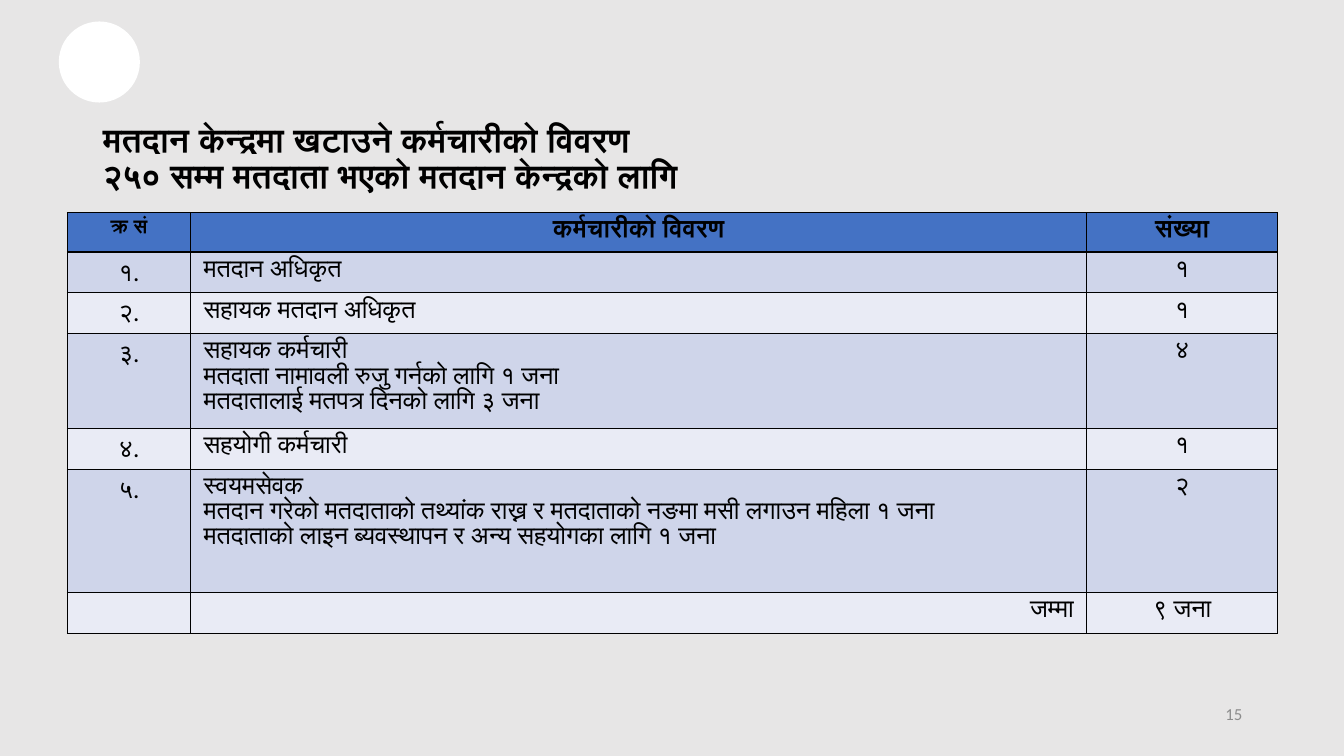
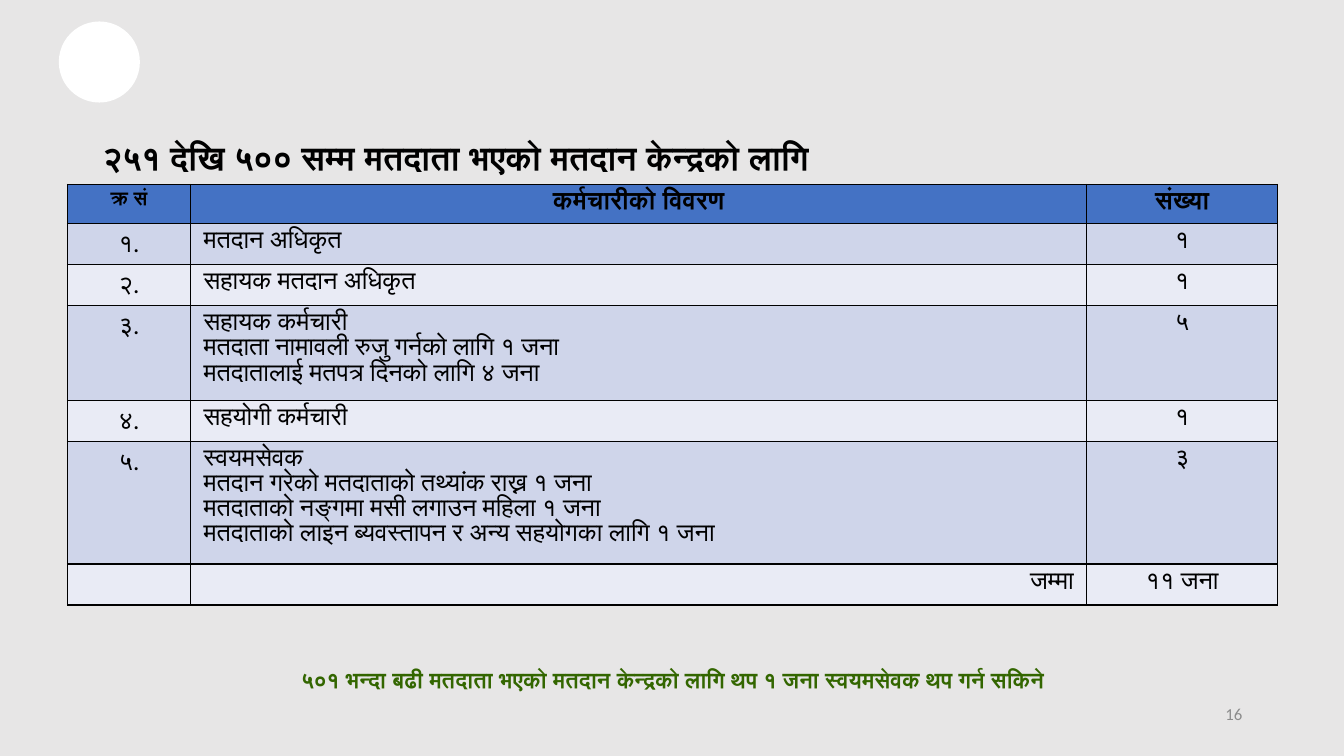
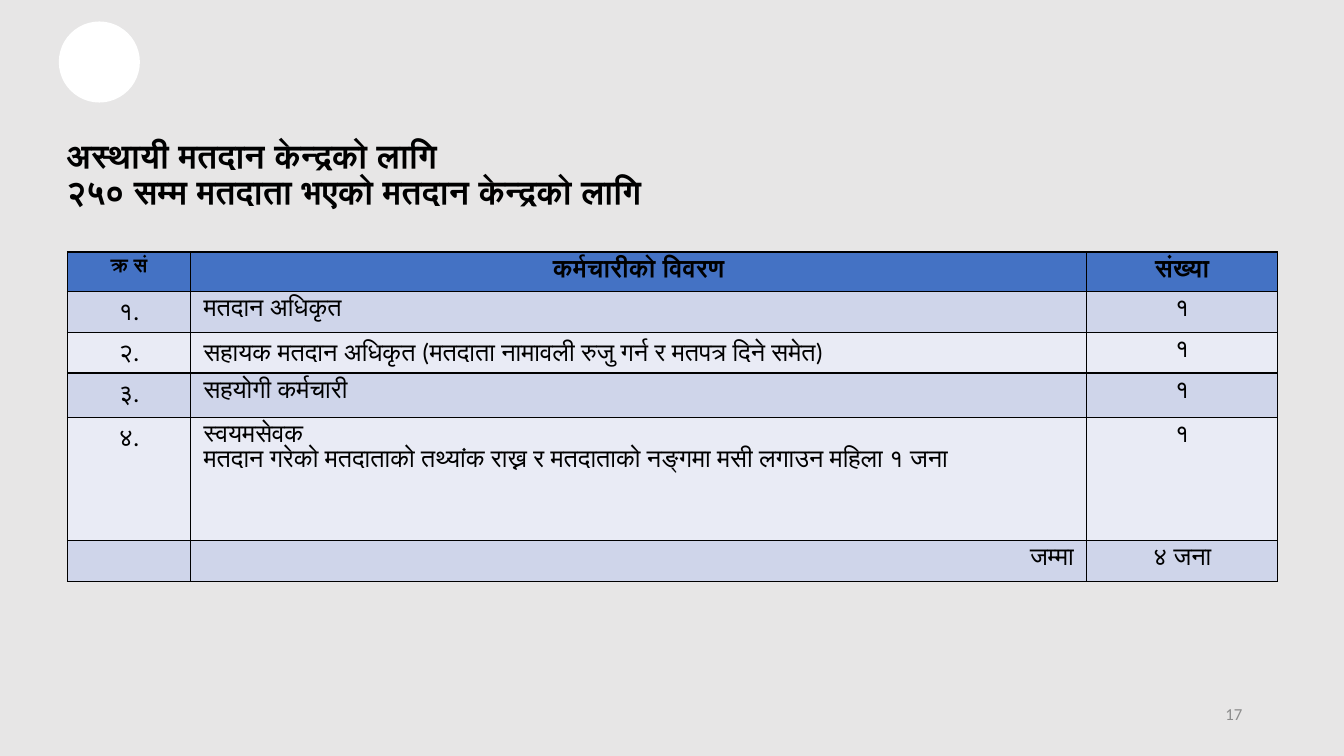
from dataclasses import dataclass

from lxml.etree import SubElement
from pptx import Presentation
from pptx.dml.color import RGBColor
from pptx.enum.shapes import MSO_SHAPE
from pptx.enum.text import MSO_ANCHOR, MSO_AUTO_SIZE, PP_ALIGN
from pptx.oxml.ns import qn
from pptx.util import Inches, Pt

# Shared look
BACKGROUND, WHITE, BLACK = "E7E6E6", "FFFFFF", "000000"
HEADER_FILL, BAND_FILLS = "4472C4", ("CFD5EA", "E9EBF5")
NOTE_GREEN, PAGE_GREY = "336600", "8C8C8C"
TITLE_FONT, BODY_FONT = "Lato", "Calibri"

TABLE_LEFT, TABLE_WIDTH = 0.67, 12
COLUMN_WIDTHS = (1.22, 8.89, 1.89)
HEADINGS = ("क्र सं", "कर्मचारीको विवरण", "संख्या")
HEADER_HEIGHT, ROW_HEIGHT = 0.39, 0.37
FIRST_PAGE = 15
DIGITS = str.maketrans("0123456789", "०१२३४५६७८९")


@dataclass
class StaffRow:
    role: str
    count: int
    duties: tuple[str, ...] = ()
    height: float = ROW_HEIGHT


@dataclass
class StaffSlide:
    title: str
    title_box: tuple[float, float, float, float]
    table_top: float
    rows: list[StaffRow]
    note: str = ""


OFFICER = StaffRow("मतदान अधिकृत", 1)
ASSISTANT_OFFICER = StaffRow("सहायक मतदान अधिकृत", 1)
SUPPORT_STAFF = StaffRow("सहयोगी कर्मचारी", 1)
ROLL_DUTY = "मतदाता नामावली रुजु गर्नको लागि १ जना"

SLIDES = [
    StaffSlide(
        "मतदान केन्द्रमा खटाउने कर्मचारीको विवरण\n२५० सम्म मतदाता भएको मतदान केन्द्रको लागि",
        (0.92, 1.13, 11.5, 0.9),
        2.11,
        [
            OFFICER,
            ASSISTANT_OFFICER,
            StaffRow("सहायक कर्मचारी", 4,
                     (ROLL_DUTY, "मतदातालाई मतपत्र दिनको लागि ३ जना"), 0.94),
            SUPPORT_STAFF,
            StaffRow("स्वयमसेवक", 2,
                     ("मतदान गरेको मतदाताको तथ्यांक राख्न र मतदाताको नङमा मसी लगाउन महिला १ जना",
                      "मतदाताको लाइन ब्यवस्थापन र अन्य सहयोगका लागि १ जना"), 1.22),
        ],
    ),
    StaffSlide(
        "२५१ देखि ५०० सम्म मतदाता भएको मतदान केन्द्रको लागि",
        (0.92, 1.13, 11.5, 0.9),
        1.83,
        [
            OFFICER,
            ASSISTANT_OFFICER,
            StaffRow("सहायक कर्मचारी", 5,
                     (ROLL_DUTY, "मतदातालाई मतपत्र दिनको लागि ४ जना"), 0.94),
            SUPPORT_STAFF,
            StaffRow("स्वयमसेवक", 3,
                     ("मतदान गरेको मतदाताको तथ्यांक राख्न १ जना",
                      "मतदाताको नङ्गमा मसी लगाउन महिला १ जना",
                      "मतदाताको लाइन ब्यवस्तापन र अन्य सहयोगका लागि १ जना"), 1.22),
        ],
        "५०१ भन्दा बढी मतदाता भएको मतदान केन्द्रको लागि थप १ जना स्वयमसेवक थप गर्न सकिने",
    ),
    StaffSlide(
        "अस्थायी मतदान केन्द्रको लागि\n२५० सम्म मतदाता भएको मतदान केन्द्रको लागि",
        (0.56, 1.33, 12, 0.83),
        2.5,
        [
            OFFICER,
            StaffRow("सहायक मतदान अधिकृत (मतदाता नामावली रुजु गर्न र मतपत्र दिने समेत)", 1),
            StaffRow("सहयोगी कर्मचारी", 1, height=0.44),
            StaffRow("स्वयमसेवक", 1,
                     ("मतदान गरेको मतदाताको तथ्यांक राख्न र मतदाताको नङ्गमा मसी लगाउन महिला १ जना",),
                     1.22),
        ],
    ),
]


def color(value: str) -> RGBColor:
    return RGBColor.from_string(value)


def nepali(number: int) -> str:
    return str(number).translate(DIGITS)


def format_paragraph(paragraph, size: float, fill: str = BLACK, bold: bool = False,
                     align=PP_ALIGN.LEFT, name: str = BODY_FONT) -> None:
    paragraph.alignment = align
    font = paragraph.font
    font.name, font.size, font.bold = name, Pt(size), bold
    font.color.rgb = color(fill)


def add_text(slide, box: tuple[float, float, float, float], text: str, size: float,
             fill: str, bold: bool, align) -> None:
    frame = slide.shapes.add_textbox(*map(Inches, box)).text_frame
    frame.word_wrap = True
    frame.vertical_anchor = MSO_ANCHOR.MIDDLE
    frame.paragraphs[0].text = text
    format_paragraph(frame.paragraphs[0], size, fill, bold, align)


def number_duty(paragraph) -> None:
    properties = paragraph._p.get_or_add_pPr()
    properties.set("marL", str(Inches(0.38)))
    properties.set("indent", str(-Inches(0.38)))
    SubElement(properties, qn("a:buAutoNum"), type="hindiAlpha1Period")


def fill_cell(cell, lines: tuple[str, ...], fill: str, align, size: float = 18,
              bold: bool = False) -> None:
    cell.margin_left = cell.margin_right = Inches(0.13)
    cell.margin_top = cell.margin_bottom = Inches(0.05)
    # Black border on every side
    properties = cell._tc.get_or_add_tcPr()
    for side in ("a:lnL", "a:lnR", "a:lnT", "a:lnB"):
        line = SubElement(properties, qn(side), w=str(Pt(1)))
        SubElement(SubElement(line, qn("a:solidFill")), qn("a:srgbClr"), val=BLACK)
    cell.fill.solid()
    cell.fill.fore_color.rgb = color(fill)
    frame = cell.text_frame
    for index, text in enumerate(lines):
        paragraph = frame.add_paragraph() if index else frame.paragraphs[0]
        paragraph.text = text
        if index:
            number_duty(paragraph)
        format_paragraph(paragraph, size, bold=bold, align=align)


def add_staff_table(slide, top: float, rows: list[StaffRow]) -> None:
    heights = [HEADER_HEIGHT, *(row.height for row in rows), ROW_HEIGHT]
    table = slide.shapes.add_table(
        len(heights), len(COLUMN_WIDTHS), Inches(TABLE_LEFT), Inches(top),
        Inches(TABLE_WIDTH), Inches(sum(heights))).table
    for column, width in zip(table.columns, COLUMN_WIDTHS):
        column.width = Inches(width)
    for table_row, height in zip(table.rows, heights):
        table_row.height = Inches(height)

    # Header
    for index, (heading, size) in enumerate(zip(HEADINGS, (14, 18, 18))):
        fill_cell(table.cell(0, index), (heading,), HEADER_FILL, PP_ALIGN.CENTER, size, True)

    # Staff rows, then the total
    contents = [((f"{nepali(number)}.",), (row.role, *row.duties), (nepali(row.count),))
                for number, row in enumerate(rows, 1)]
    total = sum(row.count for row in rows)
    contents.append(((), ("जम्मा",), (f"{nepali(total)} जना",)))
    for number, content in enumerate(contents, 1):
        middle = PP_ALIGN.RIGHT if number == len(contents) else PP_ALIGN.LEFT
        aligns = (PP_ALIGN.CENTER, middle, PP_ALIGN.CENTER)
        for index, (lines, align) in enumerate(zip(content, aligns)):
            fill_cell(table.cell(number, index), lines, BAND_FILLS[(number - 1) % 2], align)


def set_title(slide, text: str, box: tuple[float, float, float, float]) -> None:
    title = slide.shapes.title
    title.left, title.top, title.width, title.height = map(Inches, box)
    frame = title.text_frame
    frame.auto_size = MSO_AUTO_SIZE.NONE
    frame.word_wrap = True
    frame.vertical_anchor = MSO_ANCHOR.MIDDLE
    paragraph = frame.paragraphs[0]
    paragraph.text = text
    paragraph.line_spacing = 0.9
    format_paragraph(paragraph, 24, bold=True, name=TITLE_FONT)


def add_badge(slide) -> None:
    badge = slide.shapes.add_shape(
        MSO_SHAPE.OVAL, Inches(0.59), Inches(0.22), Inches(0.79), Inches(0.79))
    badge.shadow.inherit = False
    badge.fill.solid()
    badge.fill.fore_color.rgb = color(WHITE)
    badge.line.color.rgb = color(WHITE)
    badge.line.width = Pt(1)


def add_staff_slide(presentation, content: StaffSlide, page: int) -> None:
    slide = presentation.slides.add_slide(presentation.slide_layouts[5])
    add_badge(slide)
    set_title(slide, content.title, content.title_box)
    add_staff_table(slide, content.table_top, content.rows)
    add_text(slide, (9.42, 6.88, 3, 0.4), str(page), 12, PAGE_GREY, False, PP_ALIGN.RIGHT)
    if content.note:
        add_text(slide, (TABLE_LEFT, 6.33, TABLE_WIDTH, 0.83), content.note, 16,
                 NOTE_GREEN, True, PP_ALIGN.CENTER)


def main() -> None:
    presentation = Presentation()
    presentation.slide_width, presentation.slide_height = Inches(13.33), Inches(7.5)
    background = presentation.slide_master.background.fill
    background.solid()
    background.fore_color.rgb = color(BACKGROUND)
    for page, content in enumerate(SLIDES, FIRST_PAGE):
        add_staff_slide(presentation, content, page)
    presentation.save("out.pptx")


if __name__ == "__main__":
    main()
